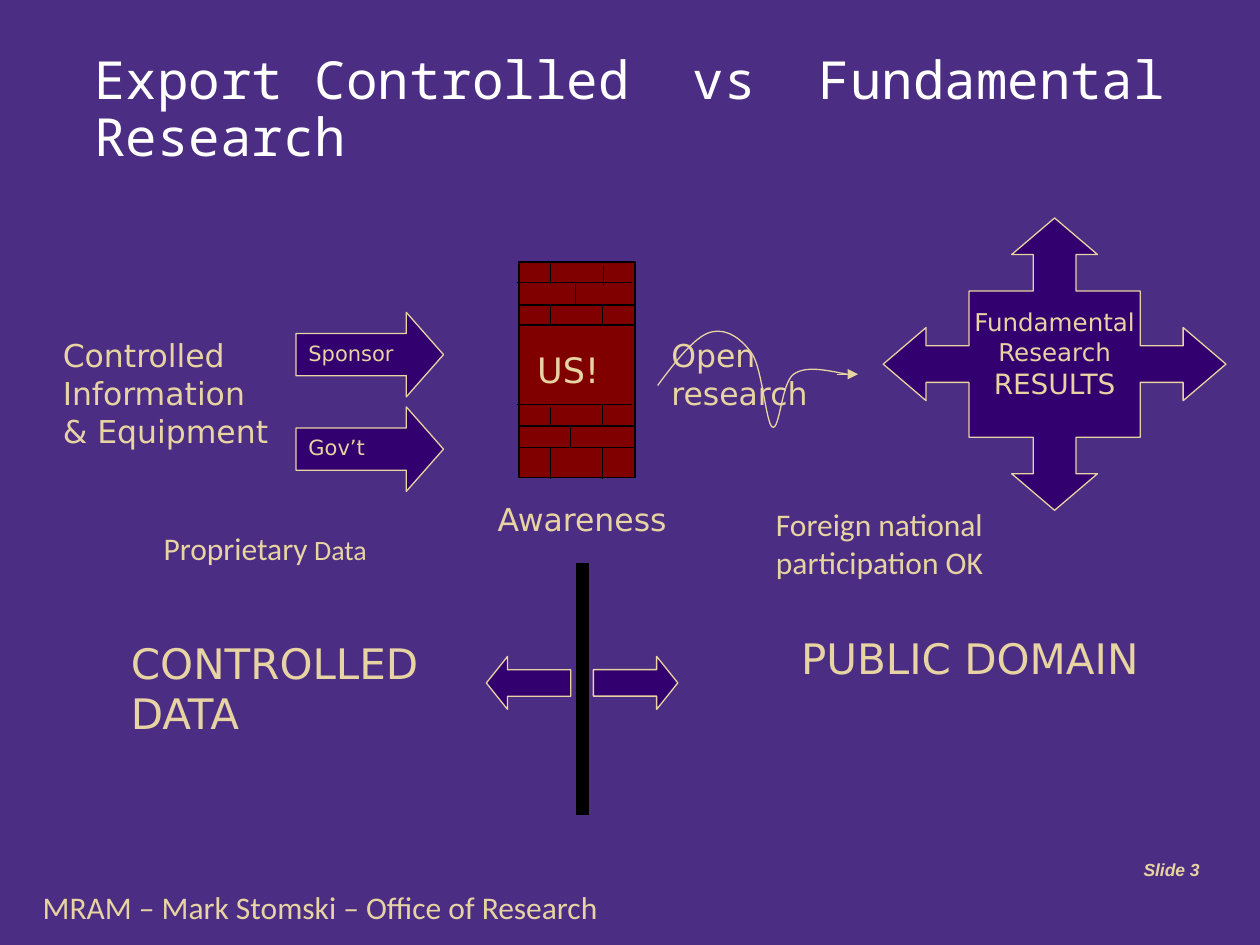
"""Build the slide that contrasts export controlled and fundamental research."""
from dataclasses import dataclass

from lxml.etree import SubElement
from pptx import Presentation
from pptx.dml.color import RGBColor
from pptx.enum.shapes import MSO_CONNECTOR, MSO_SHAPE
from pptx.enum.text import MSO_ANCHOR as Anchor, PP_ALIGN as Align
from pptx.oxml.ns import qn
from pptx.util import Inches, Pt


@dataclass(frozen=True)
class Theme:
    background: RGBColor = RGBColor(0x4B, 0x2E, 0x83)
    white: RGBColor = RGBColor(0xFF, 0xFF, 0xFF)
    black: RGBColor = RGBColor(0, 0, 0)
    gold: RGBColor = RGBColor(0xE8, 0xD3, 0xA2)
    purple: RGBColor = RGBColor(0x33, 0x00, 0x6F)
    brick: RGBColor = RGBColor(0x80, 0, 0)
    title_font: str = "Noto Sans Mono"
    label_font: str = "DejaVu Sans"
    note_font: str = "Calibri"
    number_font: str = "Arial"
    title: int = 30
    spacer: int = 32
    domain: int = 24
    wall: int = 20
    label: int = 18
    result: int = 16
    research: int = 14
    arrow: int = 12
    number: int = 10
    outline: float = 0.75
    divider: float = 7.5


theme = Theme()
presentation = Presentation()
presentation.slide_width = Inches(10)
presentation.slide_height = Inches(7.5)
slide = presentation.slides.add_slide(presentation.slide_layouts[6])
slide.background.fill.solid()
slide.background.fill.fore_color.rgb = theme.background
shapes = slide.shapes


def add_text(box, runs, font=theme.label_font, color=theme.gold, align=Align.LEFT):
    text_box = shapes.add_textbox(*map(Inches, box))
    text_box.text_frame.word_wrap = True
    paragraph = text_box.text_frame.paragraphs[0]
    paragraph.alignment = align
    for text, size in runs:
        run = paragraph.add_run()
        run.text = text
        run.font.name = font
        run.font.size = Pt(size)
        run.font.color.rgb = color
    return text_box


def add_line(start, end, color=theme.black, width=theme.outline):
    line = shapes.add_connector(MSO_CONNECTOR.STRAIGHT, *map(Inches, (*start, *end)))
    line.line.color.rgb = color
    line.line.width = Pt(width)
    SubElement(line._element.spPr, qn("a:effectLst"))
    return line


title = add_text((0.65, 0.3, 8.95, 1.08),
                 [("Export Controlled  vs  Fundamental Research", theme.title)],
                 theme.title_font, theme.white)
title.text_frame.vertical_anchor = Anchor.BOTTOM
title.text_frame.paragraphs[0].line_spacing = 0.9

wall = shapes.add_shape(MSO_SHAPE.RECTANGLE, *map(Inches, (4.12, 2.08, 0.92, 1.71)))
wall.shadow.inherit = False
wall.fill.solid()
wall.fill.fore_color.rgb = theme.brick
wall.line.color.rgb = theme.black
wall.line.width = Pt(theme.outline)

courses = [(4.1, 2.24), (4.13, 2.42), (4.12, 2.58), (4.1, 3.21), (4.12, 3.38), (4.12, 3.55)]
for left, y in courses:
    add_line((left, y), (left + 0.92, y))

joints = [
    (4.37, 2.08, 2.25), (4.79, 2.1, 2.27), (4.57, 2.25, 2.42),
    (4.37, 2.42, 2.58), (4.78, 2.42, 2.58), (4.37, 3.23, 3.39),
    (4.78, 3.21, 3.38), (4.53, 3.38, 3.55), (4.37, 3.55, 3.8), (4.78, 3.55, 3.8),
]
for x, top, bottom in joints:
    add_line((x, top), (x, bottom))

add_text((4.04, 2.55, 1.08, 0.64), [("US!", theme.wall), (" ", theme.spacer)], align=Align.CENTER)
add_text((3.66, 3.92, 1.92, 0.4), [("Awareness", theme.label)], align=Align.CENTER)

arrows = [
    (2.35, 2.48, 1.17, 0.67, 0.44, 0),
    (2.35, 3.23, 1.17, 0.67, 0.44, 0),
    (4.71, 5.21, 0.67, 0.42, 0.4, 0),
    (3.86, 5.21, 0.67, 0.42, 0.4, 180),
]
filled_shapes = []
for *box, head, rotation in arrows:
    arrow = shapes.add_shape(MSO_SHAPE.RIGHT_ARROW, *map(Inches, box))
    arrow.adjustments[1] = head
    arrow.rotation = rotation
    filled_shapes.append(arrow)

center_x, center_y, unit_x, unit_y = 8.37, 2.89, 0.34, 0.29
arm = [(-2, -2), (-0.5, -2), (-0.5, -3), (-1, -3), (0, -4), (1, -3), (0.5, -3), (0.5, -2)]
corners = []
for turn in range(4):
    corners += arm
    arm = [(-y, x) for x, y in arm]
points = [(Inches(center_x + x * unit_x), Inches(center_y + y * unit_y)) for x, y in corners]
results_builder = shapes.build_freeform(*points[0])
results_builder.add_line_segments(points[1:])
filled_shapes.append(results_builder.convert_to_shape())

for shape in filled_shapes:
    shape.shadow.inherit = False
    shape.fill.solid()
    shape.fill.fore_color.rgb = theme.purple
    shape.line.color.rgb = theme.gold
    shape.line.width = Pt(theme.outline)

add_text((7.58, 2.39, 1.58, 0.83),
         [("Fundamental Research ", theme.research), ("RESULTS", theme.result)], align=Align.CENTER)

wave_start = (5.22, 3.06)
wave_bends = [
    ((5.36, 2.87), (5.51, 2.68), (5.63, 2.64)),
    ((5.76, 2.6), (5.88, 2.68), (5.97, 2.81)),
    ((6.05, 2.93), (6.08, 3.36), (6.13, 3.39)),
    ((6.19, 3.42), (6.2, 3.04), (6.3, 2.97)),
    ((6.4, 2.9), (6.56, 2.94), (6.72, 2.97)),
]
steps = 16
wave_points = []
bend_start = wave_start
for bend in wave_bends:
    controls = (bend_start, *bend)
    for step in range(1, steps + 1):
        t = step / steps
        weights = ((1 - t) ** 3, 3 * t * (1 - t) ** 2, 3 * t * t * (1 - t), t ** 3)
        wave_points.append([Inches(sum(w * p[axis] for w, p in zip(weights, controls)))
                            for axis in (0, 1)])
    bend_start = bend[-1]
wave_builder = shapes.build_freeform(*map(Inches, wave_start))
wave_builder.add_line_segments(wave_points, close=False)
wave = wave_builder.convert_to_shape()
wave.shadow.inherit = False
wave.fill.background()
wave.line.color.rgb = theme.gold
wave.line.width = Pt(theme.outline)

wave_tip = add_line((6.64, 2.97), (6.81, 2.97), theme.gold)
SubElement(wave_tip.line._get_or_add_ln(), qn("a:tailEnd"), type="triangle")
add_line((4.62, 4.47), (4.62, 6.47), width=theme.divider)

labels = [
    ((2.35, 2.65, 1, 0.3), "Sponsor", theme.arrow),
    ((2.35, 3.4, 1, 0.3), "Gov’t", theme.arrow),
    ((0.4, 2.62, 1.83, 1.01), "Controlled Information & Equipment", theme.label),
    ((5.23, 2.62, 1.42, 0.7), "Open research", theme.label),
    ((0.94, 5.01, 2.92, 0.91), "CONTROLLED DATA", theme.domain),
    ((6.26, 4.97, 2.92, 0.91), "PUBLIC DOMAIN", theme.domain),
]
for box, text, size in labels:
    add_text(box, [(text, size)])

notes = [
    ((1.2, 4.15, 1.9, 0.4), [("Proprietary", theme.label), (" Data", theme.result)]),
    ((0.24, 7, 4.66, 0.4), [("MRAM – Mark Stomski – Office of Research", theme.label)]),
    ((6.06, 3.96, 2.12, 0.71), [("Foreign national participation OK", theme.label)]),
]
for box, runs in notes:
    add_text(box, runs, theme.note_font)

slide_number = add_text((8.45, 6.76, 1.17, 0.28), [("Slide 3", theme.number)],
                        theme.number_font, align=Align.RIGHT)
slide_number.text_frame.vertical_anchor = Anchor.MIDDLE
number_font = slide_number.text_frame.paragraphs[0].runs[0].font
number_font.bold = True
number_font.italic = True

presentation.save("out.pptx")
